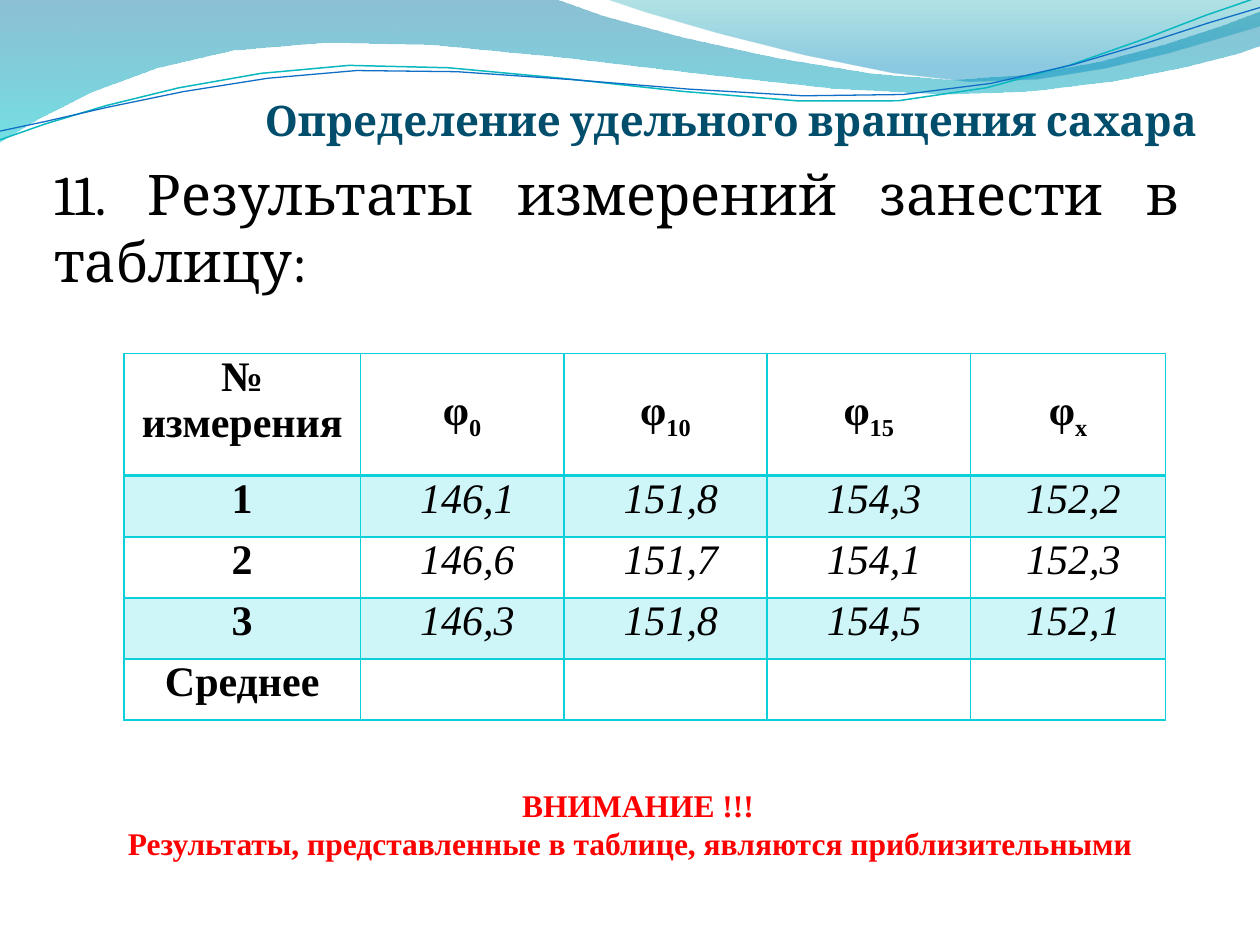
import pptx
import pptx.util
import pptx.dml.color
import pptx.enum.text
import pptx.oxml
import pptx.oxml.ns

Pt = pptx.util.Pt
ALIGN = pptx.enum.text.PP_ALIGN
ANCHOR = pptx.enum.text.MSO_ANCHOR
qn = pptx.oxml.ns.qn

COLORS = {
    "black": "000000", "heading": "004E6C", "warning": "FF0000",
    "grid": "0BD0D9", "wave_blue": "0074A1", "wave_cyan": "00C6CF",
    "crest_teal": "00A1A9", "crest_blue": "008BBF",
    "line_teal": "0AB8BF", "line_blue": "0F6FC6",
}
TITLE = {"name": "Cambria", "size": Pt(32), "bold": False}
HEADING = {"name": "Cambria", "size": Pt(24), "bold": True}
LABEL = {"name": "Times New Roman", "size": Pt(24), "bold": True, "italic": False}
VALUE = {**LABEL, "bold": False, "italic": True}
WARNING = {**LABEL, "size": Pt(18)}

WAVE = [(0, 0), (316.8, -0.7),
        (342.7, 12.2, 478.1, 45.4, 545.8, 45.4),
        (614.2, 45.4, 689.8, 18.7, 720, 6.5),
        (720.7, 25.9),
        (707.8, 31.7, 626.4, 54.7, 537.1, 54),
        (447.8, 54, 275, 20.2, 185, 24.5),
        (92.9, 25.9, 33.1, 59.8, -0.7, 81.4)]
CREST = [(344.9, -0.7),
         (366.5, 7.9, 491, 44.6, 553.7, 46.8),
         (616.3, 49.7, 691.9, 23, 720, 15.1),
         (720, 0)]
TEAL_LINE = [(0, 79.9),
             (34.6, 67, 113.8, 41, 199.4, 37.4),
             (284.4, 33.8, 427, 64.1, 513.4, 57.6),
             (599.8, 51.1, 675.4, 10.8, 718.6, -1.4)]
BLUE_LINE = [(0, 74.9),
             (33.8, 69.1, 118.1, 43.9, 203.8, 40.3),
             (290.2, 36.7, 429.8, 60.5, 516.2, 54),
             (601.9, 48.2, 677.5, 15.1, 720, 4.3)]

SUBSCRIPTS = ["0", "10", "15", "х"]
ROWS = [
    ["1", "146,1", "151,8", "154,3", "152,2"],
    ["2", "146,6", "151,7", "154,1", "152,3"],
    ["3", "146,3", "151,8", "154,5", "152,1"],
    ["Среднее", "", "", "", ""],
]


def rgb(name):
    return pptx.dml.color.RGBColor.from_string(COLORS[name])


def set_alpha(element, percent):
    color = next(element.iter(qn("a:srgbClr")))
    color.append(pptx.oxml.parse_xml(
        f'<a:alpha {pptx.oxml.ns.nsdecls("a")} val="{percent * 1000}"/>'))


def trace(segments, steps=5):
    points = [segments[0]]
    for seg in segments[1:]:
        if len(seg) == 2:
            points.append(seg)
            continue
        x0, y0 = points[-1]
        x1, y1, x2, y2, x3, y3 = seg
        for i in range(1, steps + 1):
            t = i / steps
            a, b, c, d = (1 - t) ** 3, 3 * t * (1 - t) ** 2, 3 * t * t * (1 - t), t ** 3
            points.append((a * x0 + b * x1 + c * x2 + d * x3,
                           a * y0 + b * y1 + c * y2 + d * y3))
    return [(Pt(x), Pt(y)) for x, y in points]


def add_outline(s, segments, closed):
    points = trace(segments)
    fb = s.shapes.build_freeform(*points[0], scale=1.0)
    fb.add_line_segments(points[1:], close=closed)
    sp = fb.convert_to_shape()
    sp.shadow.inherit = False
    return sp


def add_wave(s, segments, stops):
    sp = add_outline(s, segments, True)
    sp.line.fill.background()
    sp.fill.gradient()
    sp.fill.gradient_angle = 270
    gradient = next(sp._element.iter(qn("a:gsLst")))
    for stop, gs, (position, color, alpha) in zip(sp.fill.gradient_stops, gradient, stops):
        stop.position = position
        stop.color.rgb = rgb(color)
        set_alpha(gs, alpha)


def add_curve(s, segments, color, width):
    sp = add_outline(s, segments, False)
    sp.fill.background()
    sp.line.color.rgb = rgb(color)
    sp.line.width = Pt(width)


def add_run(p, text, fmt, color="black"):
    r = p.add_run()
    r.text = text
    for key, value in fmt.items():
        setattr(r.font, key, value)
    r.font.color.rgb = rgb(color)
    return r


def add_text(s, box, lines, fmt, color, align, anchor, insets):
    tf = s.shapes.add_textbox(*map(Pt, box)).text_frame
    frame = {"word_wrap": True, "vertical_anchor": anchor}
    sides = ("margin_left", "margin_top", "margin_right", "margin_bottom")
    frame.update(zip(sides, map(Pt, insets)))
    for key, value in frame.items():
        setattr(tf, key, value)
    for i, line in enumerate(lines):
        p = tf.add_paragraph() if i else tf.paragraphs[0]
        p.alignment = align
        add_run(p, line, fmt, color)
    return tf


def set_indent(p, side, points):
    p._p.get_or_add_pPr().set(side, str(Pt(points)))


def add_borders(cell, widths):
    tcPr = cell._tc.get_or_add_tcPr()
    for side, width in widths.items():
        tcPr.append(pptx.oxml.parse_xml(
            f'<a:ln{side} {pptx.oxml.ns.nsdecls("a")} w="{Pt(width)}"><a:solidFill>'
            f'<a:srgbClr val="{COLORS["grid"]}"/></a:solidFill></a:ln{side}>'))


def style_cell(cell, row):
    for key, value in {"margin_left": Pt(5), "margin_right": Pt(5),
                       "margin_top": 0, "margin_bottom": 0}.items():
        setattr(cell, key, value)
    add_borders(cell, {"L": 1, "R": 1, "T": 2 if row == 1 else 1, "B": 1 if row else 2})
    if row % 2:
        cell.fill.solid()
        cell.fill.fore_color.rgb = rgb("grid")
        set_alpha(cell._tc.tcPr.find(qn("a:solidFill")), 20)
    else:
        cell.fill.background()
    p = cell.text_frame.paragraphs[0]
    p.alignment = ALIGN.CENTER
    return p


def add_results(s):
    widths = [135.2, 116.2, 116.2, 116.2, 111.5]
    heights = [69.84] + [34.92] * len(ROWS)
    table = s.shapes.add_table(len(heights), len(widths), Pt(70.8), Pt(202.1),
                               Pt(sum(widths)), Pt(sum(heights))).table
    for column, width in zip(table.columns, widths):
        column.width = Pt(width)
    for row, height in zip(table.rows, heights):
        row.height = Pt(height)
    add_run(style_cell(table.cell(0, 0), 0), "№ измерения", LABEL)
    for j, subscript in enumerate(SUBSCRIPTS, 1):
        cell = table.cell(0, j)
        cell.vertical_anchor = ANCHOR.MIDDLE
        p = style_cell(cell, 0)
        add_run(p, "φ", LABEL)
        r = add_run(p, subscript, LABEL)
        r._r.get_or_add_rPr().set("baseline", "-25000")
    for i, row in enumerate(ROWS, 1):
        for j, text in enumerate(row):
            p = style_cell(table.cell(i, j), i)
            if text:
                add_run(p, text, VALUE if j else LABEL)
            if j:
                set_indent(p, "marL", 6)


def main():
    prs = pptx.Presentation()
    prs.slide_width, prs.slide_height = Pt(720), Pt(540)
    s = prs.slides.add_slide(prs.slide_layouts[6])
    add_wave(s, WAVE, [(0, "wave_blue", 45), (1, "wave_cyan", 55)])
    add_wave(s, CREST, [(0, "crest_teal", 30), (0.8, "crest_blue", 45)])
    add_curve(s, TEAL_LINE, "line_teal", 0.85)
    add_curve(s, BLUE_LINE, "line_blue", 0.75)
    add_text(s, (31, 88.6, 643.7, 79.2), ["11. Результаты измерений занести в таблицу:"],
             TITLE, "black", ALIGN.JUSTIFY, ANCHOR.BOTTOM, (0, 3.6, 0, 0))
    add_text(s, (36, 55.4, 648, 27.4), ["Определение удельного вращения сахара"],
             HEADING, "heading", ALIGN.RIGHT, ANCHOR.BOTTOM, (0, 3.6, 0, 0))
    add_results(s)
    tf = add_text(s, (62.6, 445.7, 604.1, 51.1),
                  ["ВНИМАНИЕ !!!", "Результаты, представленные в таблице, являются приблизительными"],
                  WARNING, "warning", ALIGN.CENTER, ANCHOR.TOP, (7.2, 3.6, 7.2, 3.6))
    set_indent(tf.paragraphs[1], "marR", 9)
    prs.save("out.pptx")


if __name__ == "__main__":
    main()
